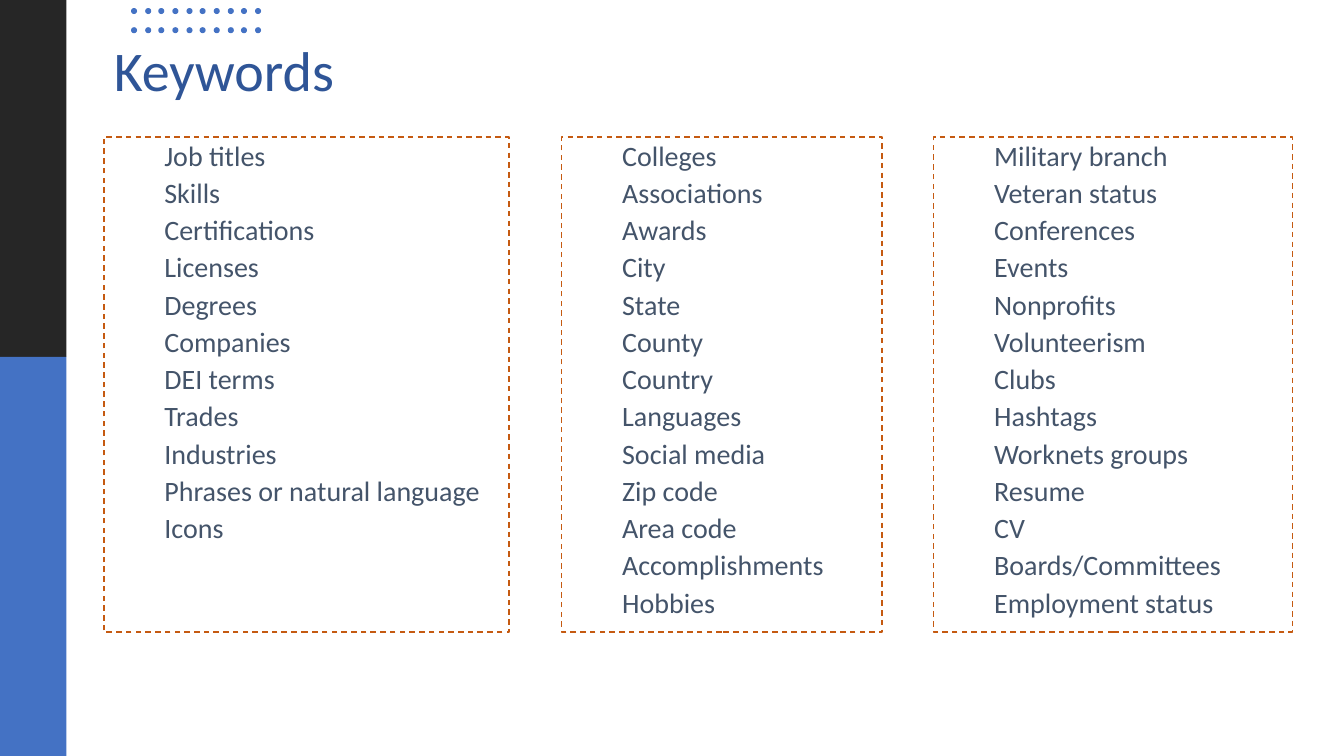
from dataclasses import dataclass

from lxml import etree
from pptx import Presentation
from pptx.dml.color import RGBColor
from pptx.enum.dml import MSO_LINE
from pptx.enum.shapes import MSO_SHAPE
from pptx.enum.text import MSO_ANCHOR, MSO_AUTO_SIZE, PP_ALIGN
from pptx.oxml.ns import qn
from pptx.util import Pt

RECTANGLE, OVAL = MSO_SHAPE.RECTANGLE, MSO_SHAPE.OVAL
TOP, BOTTOM = MSO_ANCHOR.TOP, MSO_ANCHOR.BOTTOM
LEFT, DASH, NO_FIT = PP_ALIGN.LEFT, MSO_LINE.DASH, MSO_AUTO_SIZE.NONE

EMU_PER_PX = 9144  # 100 px to the inch
FONT = "Calibri"
CHARCOAL, BLUE, NAVY = "262626", "4472C4", "2F5597"
SLATE, ORANGE = "44546A", "C55A11"
COMPARISON_LAYOUT = 4
LIST_INDENT = 50


@dataclass(frozen=True)
class Box:
    left: int
    top: int
    width: int
    height: int


@dataclass(frozen=True)
class KeywordColumn:
    left: int
    width: int
    keywords: tuple[str, ...]


COLUMNS = (
    KeywordColumn(103, 402, (
        "Job titles", "Skills", "Certifications", "Licenses", "Degrees",
        "Companies", "DEI terms", "Trades", "Industries",
        "Phrases or natural language", "Icons")),
    KeywordColumn(557, 318, (
        "Colleges", "Associations", "Awards", "City", "State", "County",
        "Country", "Languages", "Social media", "Zip code", "Area code",
        "Accomplishments", "Hobbies")),
    KeywordColumn(926, 356, (
        "Military branch", "Veteran status", "Conferences", "Events",
        "Nonprofits", "Volunteerism", "Clubs", "Hashtags",
        "Worknets groups", "Resume", "CV", "Boards/Committees",
        "Employment status")),
)


def px(length: int) -> int:
    return length * EMU_PER_PX


def color(hex_code: str) -> RGBColor:
    return RGBColor.from_string(hex_code)


def place(shape, box: Box) -> None:
    shape.left, shape.top = px(box.left), px(box.top)
    shape.width, shape.height = px(box.width), px(box.height)


def add_filled(slide, preset, box: Box, fill: str) -> None:
    shape = slide.shapes.add_shape(
        preset, px(box.left), px(box.top), px(box.width), px(box.height))
    shape.shadow.inherit = False
    shape.fill.solid()
    shape.fill.fore_color.rgb = color(fill)
    shape.line.fill.background()


def write_text(shape, lines: tuple[str, ...], *, size: int, ink: str,
               anchor, level: int = 0, indent: int = 0,
               space_before: int = 0) -> None:
    frame = shape.text_frame
    frame.text = "\n".join(lines)
    frame.word_wrap = True
    frame.auto_size = NO_FIT
    frame.vertical_anchor = anchor
    for paragraph in frame.paragraphs:
        paragraph.level = level
        paragraph.alignment = LEFT
        paragraph.line_spacing = 0.9
        paragraph.space_before = Pt(space_before)
        paragraph.space_after = Pt(0)
        properties = paragraph._p.get_or_add_pPr()
        properties.set("marL", str(px(indent)))
        properties.set("indent", "0")
        etree.SubElement(properties, qn("a:buNone"))
        font = paragraph.runs[0].font
        font.name, font.size, font.bold = FONT, Pt(size), False
        font.color.rgb = color(ink)


def fill_column(placeholder, column: KeywordColumn) -> None:
    place(placeholder, Box(column.left, 136, column.width, 491))
    placeholder.line.color.rgb = color(ORANGE)
    placeholder.line.width = Pt(1)
    placeholder.line.dash_style = DASH
    write_text(placeholder, column.keywords, size=20, ink=SLATE, anchor=TOP,
               level=1, indent=LIST_INDENT, space_before=5)


def main() -> None:
    deck = Presentation()
    deck.slide_width, deck.slide_height = px(1333), px(750)
    slide = deck.slides.add_slide(deck.slide_layouts[COMPARISON_LAYOUT])
    title, *bodies = slide.placeholders

    # Title
    place(title, Box(103, 1, 1150, 107))
    write_text(title, ("Keywords",), size=40, ink=NAVY, anchor=BOTTOM)

    # Side bar
    add_filled(slide, RECTANGLE, Box(0, 0, 66, 354), CHARCOAL)
    add_filled(slide, RECTANGLE, Box(0, 354, 66, 396), BLUE)

    # Dot grid
    for dot_top in (8, 27):
        for step in range(10):
            dot_left = 130 + round(step * 41 / 3)
            add_filled(slide, OVAL, Box(dot_left, dot_top, 6, 6), BLUE)

    # Keyword lists
    for placeholder, column in zip(bodies, COLUMNS):
        fill_column(placeholder, column)
    for unused in bodies[len(COLUMNS):]:
        unused.element.getparent().remove(unused.element)

    deck.save("out.pptx")


if __name__ == "__main__":
    main()
